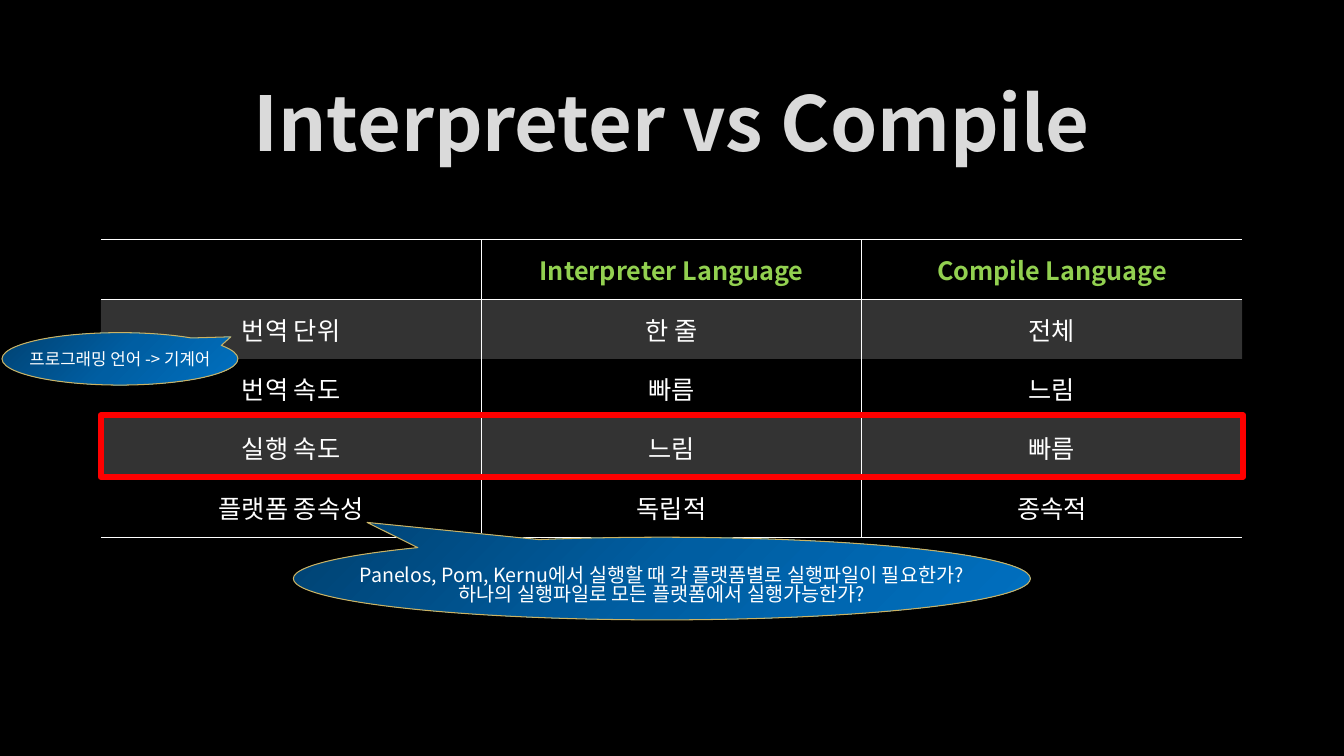
from copy import deepcopy
from pptx import Presentation
from pptx.dml.color import RGBColor
from pptx.enum.shapes import MSO_SHAPE as Kind
from pptx.enum.text import MSO_ANCHOR as Anchor, PP_ALIGN as Align
from pptx.oxml import parse_xml
from pptx.oxml.ns import nsdecls, qn
from pptx.util import Inches, Pt

FONT = "Noto Sans CJK KR"
WHITE, GREEN, RED, GOLD = "FFFFFF", "92D050", "FF0000", "CAB263"
BLUES = ["004272", "005EA2", "0070C0"]
ROWS = [
    ["", "Interpreter Language", "Compile Language"],
    ["번역 단위", "한 줄", "전체"],
    ["번역 속도", "빠름", "느림"],
    ["실행 속도", "느림", "빠름"],
    ["플랫폼 종속성", "독립적", "종속적"],
]


def rgb(code):
    """Turn a hex string into a colour."""
    return RGBColor.from_string(code)


def node(tag, inner="", attrs=""):
    """Make a drawing element."""
    return parse_xml(f"<a:{tag} {nsdecls('a')} {attrs}>{inner}</a:{tag}>")


def write(frame, lines, size, color, bold=False, gap=None):
    """Fill a text frame with centred lines."""
    for i, line in enumerate(lines):
        para = frame.add_paragraph() if i else frame.paragraphs[0]
        para.alignment = Align.CENTER
        para.line_spacing = gap
        run = para.add_run()
        run.text = line
        font = run.font
        font.size, font.bold, font.name = Pt(size), bold, FONT
        font.color.rgb = rgb(color)
        run._r.rPr.append(node("ea", attrs=f'typeface="{FONT}"'))


def add_title(slide, text):
    """Place and format the title."""
    title = slide.shapes.title
    title.left, title.top = Inches(1), Inches(0.67)
    title.width, title.height = Inches(11.32), Inches(1.06)
    frame = title.text_frame
    frame.vertical_anchor = Anchor.MIDDLE
    write(frame, [text], 54, "DADADA", True)
    edge = '<a:solidFill><a:srgbClr val="404040"><a:alpha val="10000"/></a:srgbClr></a:solidFill>'
    frame.paragraphs[0].runs[0]._r.rPr.insert(0, node("ln", edge, 'w="9525"'))


def rule(cell, sides):
    """Draw white borders on the named sides only."""
    props = cell._tc.get_or_add_tcPr()
    line = f'<a:solidFill><a:srgbClr val="{WHITE}"/></a:solidFill>'
    for side in "LRTB":
        inner = line if side in sides else "<a:noFill/>"
        props.append(node(f"ln{side}", inner, 'w="12700"'))


def shade(cell, on):
    """Give a cell a faint white fill or none."""
    if not on:
        cell.fill.background()
        return
    cell.fill.solid()
    cell.fill.fore_color.rgb = rgb(WHITE)
    color = cell._tc.tcPr.find(".//" + qn("a:solidFill") + "[last()]/" + qn("a:srgbClr"))
    color = cell._tc.tcPr.find(qn("a:solidFill")).find(qn("a:srgbClr"))
    color.append(node("alpha", attrs='val="20000"'))


def add_grid(slide):
    """Add the comparison table."""
    rows, cols = len(ROWS), len(ROWS[0])
    grid = slide.shapes.add_table(
        rows, cols, Inches(1), Inches(2.38), Inches(11.32), Inches(2.95)).table
    grid.first_row = grid.horz_banding = False
    for row in grid.rows:
        row.height = Inches(0.59)
    for r, texts in enumerate(ROWS):
        for c, text in enumerate(texts):
            cell = grid.cell(r, c)
            cell.vertical_anchor = Anchor.MIDDLE
            sides = ("L" if c else "") + ("R" if c < cols - 1 else "")
            sides += {0: "TB", 1: "T", rows - 1: "B"}.get(r, "")
            rule(cell, sides)
            shade(cell, r % 2)
            if text:
                write(cell.text_frame, [text], 18, WHITE if r else GREEN, not r)


def add_shape(slide, kind, box, line, width):
    """Add a plain outlined shape."""
    shape = slide.shapes.add_shape(kind, *map(Inches, box))
    shape.shadow.inherit = False
    shape.fill.background()
    shape.line.color.rgb = rgb(line)
    shape.line.width = Pt(width)
    return shape


def add_bubble(slide, box, tip, lines, size, top, gap=None):
    """Add a blue speech bubble."""
    shape = add_shape(slide, Kind.OVAL_CALLOUT, box, GOLD, 0.75)
    for i, value in enumerate(tip):
        shape.adjustments[i] = value
    fill = shape.fill
    fill.gradient()
    fill.gradient_angle = 315
    stops = shape._element.spPr.find(".//" + qn("a:gsLst"))
    stops.insert(1, deepcopy(stops[0]))
    for i, stop in enumerate(fill.gradient_stops):
        stop.position = i / 2
        stop.color.rgb = rgb(BLUES[i])
    frame = shape.text_frame
    frame.word_wrap = False
    frame.vertical_anchor = Anchor.MIDDLE
    frame.margin_left = frame.margin_right = 0
    frame.margin_top, frame.margin_bottom = Inches(top), Inches(0.05)
    write(frame, lines, size, WHITE, gap=gap)


def main():
    """Build the slide and save it."""
    deck = Presentation()
    deck.slide_width, deck.slide_height = Inches(13.33), Inches(7.5)
    slide = deck.slides.add_slide(deck.slide_layouts[5])
    back = slide.background.fill
    back.solid()
    back.fore_color.rgb = rgb("000000")
    add_title(slide, "Interpreter vs Compile")
    add_grid(slide)
    add_bubble(slide, (0.02, 3.3, 2.34, 0.52), (0.47, -0.42),
               ["프로그래밍 언어 -> 기계어"], 12, 0.05)
    add_bubble(slide, (2.91, 5.33, 7.31, 0.82), (-0.4, -0.68),
               ["Panelos, Pom, Kernu에서 실행할 때 각 플랫폼별로 실행파일이 필요한가?",
                "하나의 실행파일로 모든 플랫폼에서 실행가능한가?"], 14, 0.2, 0.8)
    add_shape(slide, Kind.RECTANGLE, (1, 4.12, 11.33, 0.61), RED, 4.5)
    deck.save("out.pptx")


if __name__ == "__main__":
    main()
